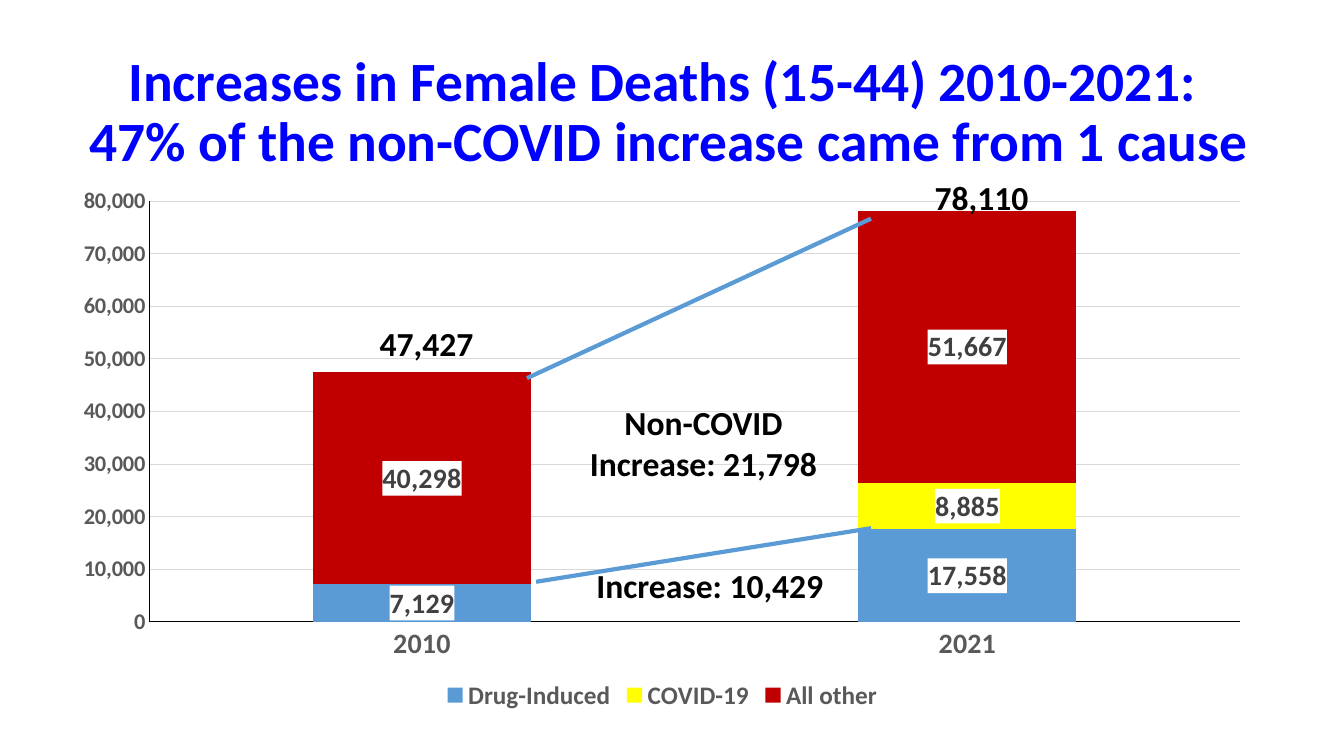
from lxml import etree
from pptx import Presentation
from pptx.chart.data import CategoryChartData
from pptx.dml.color import RGBColor
from pptx.enum.chart import XL_CHART_TYPE, XL_LEGEND_POSITION, XL_TICK_MARK
from pptx.enum.shapes import MSO_CONNECTOR
from pptx.enum.text import MSO_ANCHOR, MSO_AUTO_SIZE, PP_ALIGN
from pptx.oxml import parse_xml
from pptx.oxml.ns import nsdecls, qn
from pptx.util import Cm, Pt

STACKED = XL_CHART_TYPE.COLUMN_STACKED
BOTTOM = XL_LEGEND_POSITION.BOTTOM
NO_TICK = XL_TICK_MARK.NONE
STRAIGHT = MSO_CONNECTOR.STRAIGHT
MIDDLE = MSO_ANCHOR.MIDDLE
NO_FIT, GROW = MSO_AUTO_SIZE.NONE, MSO_AUTO_SIZE.SHAPE_TO_FIT_TEXT
LEFT, CENTER, RIGHT = PP_ALIGN.LEFT, PP_ALIGN.CENTER, PP_ALIGN.RIGHT

BLACK = RGBColor(0x00, 0x00, 0x00)
TITLE_BLUE = RGBColor(0x00, 0x00, 0xFF)
DRUG_BLUE = RGBColor(0x5B, 0x9B, 0xD5)
COVID_YELLOW = RGBColor(0xFF, 0xFF, 0x00)
OTHER_RED = RGBColor(0xC0, 0x00, 0x00)
AXIS_GRAY = RGBColor(0x59, 0x59, 0x59)
LABEL_GRAY = RGBColor(0x40, 0x40, 0x40)
GRID_GRAY = RGBColor(0xD9, 0xD9, 0xD9)

YEARS = ["2010", "2021"]
CAUSES = [
    ("Drug-Induced", (7129, 17558), DRUG_BLUE),
    ("COVID-19", (0, 8885), COVID_YELLOW),
    ("All other", (40298, 51667), OTHER_RED),
]


class DeathsSlide:
    font_name = "Calibri"

    def __init__(self, deck):
        self.slide = deck.slides.add_slide(deck.slide_layouts[5])

    def style(self, font, size, color, bold=True):
        font.name, font.size, font.bold = self.font_name, Pt(size), bold
        font.color.rgb = color

    def title(self, text, left, top, width, height):
        heading = self.slide.shapes.title
        heading.left, heading.top = Cm(left), Cm(top)
        heading.width, heading.height = Cm(width), Cm(height)
        frame = heading.text_frame
        frame.text = text
        frame.auto_size, frame.vertical_anchor = NO_FIT, MIDDLE
        paragraph = frame.paragraphs[0]
        paragraph.alignment, paragraph.line_spacing = CENTER, 0.9
        for run in paragraph.runs:
            self.style(run.font, 39.6, TITLE_BLUE)

    def note(self, text, left, top, width, height, align=LEFT):
        box = self.slide.shapes.add_textbox(Cm(left), Cm(top), Cm(width), Cm(height))
        frame = box.text_frame
        frame.text = text
        frame.word_wrap, frame.auto_size = False, GROW
        for paragraph in frame.paragraphs:
            paragraph.alignment = align
            self.style(paragraph.runs[0].font, 24, BLACK)

    def trend(self, x1, y1, x2, y2):
        line = self.slide.shapes.add_connector(STRAIGHT, Cm(x1), Cm(y1), Cm(x2), Cm(y2))
        line.line.color.rgb, line.line.width = DRUG_BLUE, Pt(3)
        etree.SubElement(line._element.spPr, qn("a:effectLst"))

    def axis(self, axis, size):
        axis.major_tick_mark = axis.minor_tick_mark = NO_TICK
        axis.format.line.color.rgb, axis.format.line.width = BLACK, Pt(0.75)
        self.style(axis.tick_labels.font, size, AXIS_GRAY)

    def value_labels(self, series):
        labels = series.data_labels
        labels.show_value = True
        labels.number_format, labels.number_format_is_linked = "#,##0", False
        self.style(labels.font, 20, LABEL_GRAY)
        # White plate behind each number
        labels._element.find(qn("c:txPr")).addprevious(parse_xml(
            f'<c:spPr {nsdecls("c", "a")}><a:solidFill><a:srgbClr val="FFFFFF"/>'
            "</a:solidFill></c:spPr>"))
        # Zero values carry no label
        zeros = [i for i, value in enumerate(series.values) if value == 0]
        for position, index in enumerate(zeros):
            labels._element.insert(position, parse_xml(
                f'<c:dLbl {nsdecls("c")}><c:idx val="{index}"/>'
                '<c:delete val="1"/></c:dLbl>'))

    def plot_area(self, chart, **fractions):
        area = chart._chartSpace.chart.plotArea
        for old_layout in area.findall(qn("c:layout")):
            area.remove(old_layout)
        sides = "".join(f'<c:{side} val="{part}"/>' for side, part in fractions.items())
        area.insert(0, parse_xml(
            f'<c:layout {nsdecls("c")}><c:manualLayout><c:layoutTarget val="inner"/>'
            f'<c:xMode val="edge"/><c:yMode val="edge"/>{sides}'
            "</c:manualLayout></c:layout>"))

    def stacked_chart(self, left, top, width, height):
        data = CategoryChartData(number_format="#,##0")
        data.categories = YEARS
        for cause, deaths, _ in CAUSES:
            data.add_series(cause, deaths)
        chart = self.slide.shapes.add_chart(
            STACKED, Cm(left), Cm(top), Cm(width), Cm(height), data).chart
        self.style(chart.font, 10, BLACK, bold=False)
        chart.has_title = False
        chart.has_legend = True
        chart.legend.position, chart.legend.include_in_layout = BOTTOM, False
        self.style(chart.legend.font, 18, AXIS_GRAY)

        self.axis(chart.category_axis, 20)
        deaths_axis = chart.value_axis
        self.axis(deaths_axis, 16)
        deaths_axis.minimum_scale, deaths_axis.maximum_scale = 0, 80000
        deaths_axis.major_unit = 10000
        deaths_axis.tick_labels.number_format = "#,##0"
        deaths_axis.tick_labels.number_format_is_linked = False
        grid = deaths_axis.major_gridlines.format.line
        grid.color.rgb, grid.width = GRID_GRAY, Pt(0.75)

        bars = chart.plots[0]
        bars.gap_width, bars.overlap, bars.vary_by_categories = 150, 100, False
        for series, (_, _, color) in zip(bars.series, CAUSES):
            series.format.fill.solid()
            series.format.fill.fore_color.rgb = color
            self.value_labels(series)
        self.plot_area(chart, x=0.065, y=0.05, w=0.925, h=0.777)


def main():
    deck = Presentation()
    deck.slide_width, deck.slide_height = Cm(33.87), Cm(19.05)
    slide = DeathsSlide(deck)

    # Heading and chart
    slide.title("Increases in Female Deaths (15-44) 2010-2021: \v"
                "47% of the non-COVID increase came from 1 cause",
                0.74, 1.02, 32.23, 3.68)
    slide.stacked_chart(1.83, 4.39, 29.72, 13.64)

    # Totals above the columns
    slide.note("78,110", 23.27, 4.34, 2.9, 1.27, RIGHT)
    slide.note("47,427", 9.32, 8, 2.9, 1.27)

    # Increases between the years
    slide.note("Increase: 10,429", 14.78, 14.12, 6.3, 1.27)
    slide.note("Non-COVID\nIncrease: 21,798", 14.58, 10.01, 6.3, 2.31, CENTER)
    slide.trend(13.51, 14.66, 21.95, 13.31)
    slide.trend(13.28, 9.53, 21.95, 5.51)

    deck.save("out.pptx")


if __name__ == "__main__":
    main()
